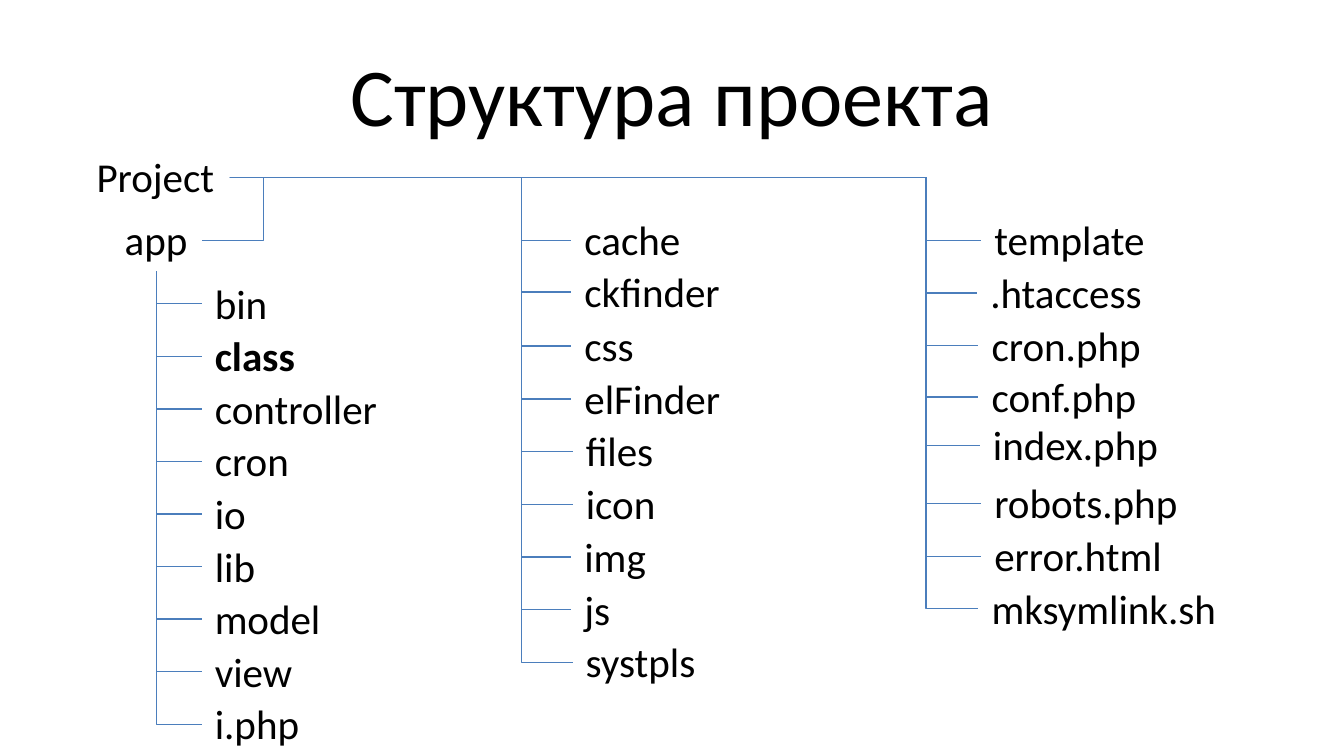
from lxml.etree import SubElement
from pptx import Presentation
from pptx.dml.color import RGBColor
from pptx.enum.shapes import MSO_CONNECTOR
from pptx.enum.text import MSO_ANCHOR, MSO_AUTO_SIZE, PP_ALIGN
from pptx.oxml.ns import qn
from pptx.util import Inches, Pt

# Content: (label, box width, shift right, shift down)
TITLE = "Структура проекта"
APP_FILES = [
    ("bin", 0.61), ("class", 0.81), ("controller", 1.42), ("cron", 0.77), ("io", 0.44),
    ("lib", 0.5), ("model", 1.0), ("view", 0.81), ("i.php", 0.83),
]
FOLDERS = [
    ("cache", 0.92), ("ckfinder", 1.22, 0, -0.01), ("css", 0.57), ("elFinder", 1.22),
    ("files", 0.71, 0.01), ("icon", 0.72, 0.01), ("img", 0.66), ("js", 0.4),
    ("systpls", 1.03, 0.01),
]
ROOT_FILES = [
    ("template", 1.33, 0.02), (".htaccess", 1.34, -0.01), ("cron.php", 1.35),
    ("conf.php", 1.29, 0, -0.01), ("index.php", 1.44, 0.01, -0.04),
    ("robots.php", 1.58, 0.02), ("error.html", 1.46, 0.02), ("mksymlink.sh", 1.89),
]
BOLD_LABELS = {"class"}

THEME = {
    "font": "Calibri",
    "text": RGBColor(0, 0, 0),
    "line": RGBColor(0x4B, 0x7E, 0xBC),
    "title_size": 44,
    "label_size": 22,
    "line_width": 0.75,
}

# Layout
SLIDE_WIDTH = Inches(10)
SLIDE_HEIGHT = SLIDE_WIDTH * 9 // 16
ROW_HEIGHT = 0.47
MIDDLE = 0.24
PROJECT = (0.62, 1.08, 1.09, ROW_HEIGHT)
APP = (0.83, 1.55, 0.67, ROW_HEIGHT)
PROJECT_EXIT = (PROJECT[0] + PROJECT[2], PROJECT[1] + MIDDLE)
APP_EXIT = (APP[0] + APP[2] / 2, APP[1] + ROW_HEIGHT)
# (entries, left, first top, last top, branch start, trunk x)
COLUMNS = [
    (APP_FILES, 1.5, 2.02, 5.15, APP_EXIT, APP_EXIT[0]),
    (FOLDERS, 4.25, 1.55, 4.69, PROJECT_EXIT, 3.88),
    (ROOT_FILES, 7.28, 1.55, 4.29, PROJECT_EXIT, 6.89),
]


def add_text(page, text, area, size=THEME["label_size"], bold=False,
             align=PP_ALIGN.LEFT, anchor=MSO_ANCHOR.TOP, wrap=False):
    box = page.shapes.add_textbox(*map(Inches, area))
    frame = box.text_frame
    frame.word_wrap = wrap
    frame.auto_size = MSO_AUTO_SIZE.NONE if wrap else MSO_AUTO_SIZE.SHAPE_TO_FIT_TEXT
    frame.vertical_anchor = anchor
    para = frame.paragraphs[0]
    para.alignment = align
    span = para.add_run()
    span.text = text
    span.font.name = THEME["font"]
    span.font.size = Pt(size)
    span.font.bold = bold
    span.font.color.rgb = THEME["text"]


def add_branch(page, start, end, trunk):
    """Draw an elbow whose vertical part runs at x = trunk."""
    branch = page.shapes.add_connector(MSO_CONNECTOR.ELBOW, *map(Inches, start + end))
    branch.line.color.rgb = THEME["line"]
    branch.line.width = Pt(THEME["line_width"])
    properties = branch.element.spPr
    SubElement(properties, qn("a:effectLst"))
    bend = round((trunk - start[0]) / (end[0] - start[0]) * 100000)
    guides = properties.find(qn("a:prstGeom")).find(qn("a:avLst"))
    SubElement(guides, qn("a:gd"), name="adj1", fmla=f"val {bend}")


def add_column(page, entries, left, first, last, start, trunk):
    pitch = (last - first) / (len(entries) - 1)
    for row, (label, width, *shift) in enumerate(entries):
        right, down = (shift + [0, 0])[:2]
        x, y = left + right, first + row * pitch + down
        add_branch(page, start, (x, y + MIDDLE), trunk)
        add_text(page, label, (x, y, width, ROW_HEIGHT), bold=label in BOLD_LABELS)


def main():
    deck = Presentation()
    deck.slide_width, deck.slide_height = SLIDE_WIDTH, SLIDE_HEIGHT
    page = deck.slides.add_slide(deck.slide_layouts[6])

    # Title
    add_text(page, TITLE, (0.5, 0.23, 9, 0.94), size=THEME["title_size"],
             align=PP_ALIGN.CENTER, anchor=MSO_ANCHOR.MIDDLE, wrap=True)

    # Root and its app folder
    add_text(page, "Project", PROJECT)
    add_text(page, "app", APP)
    add_branch(page, PROJECT_EXIT, (APP[0] + APP[2], APP[1] + MIDDLE), 1.96)

    # Tree columns
    for column in COLUMNS:
        add_column(page, *column)

    deck.save("out.pptx")


if __name__ == "__main__":
    main()
